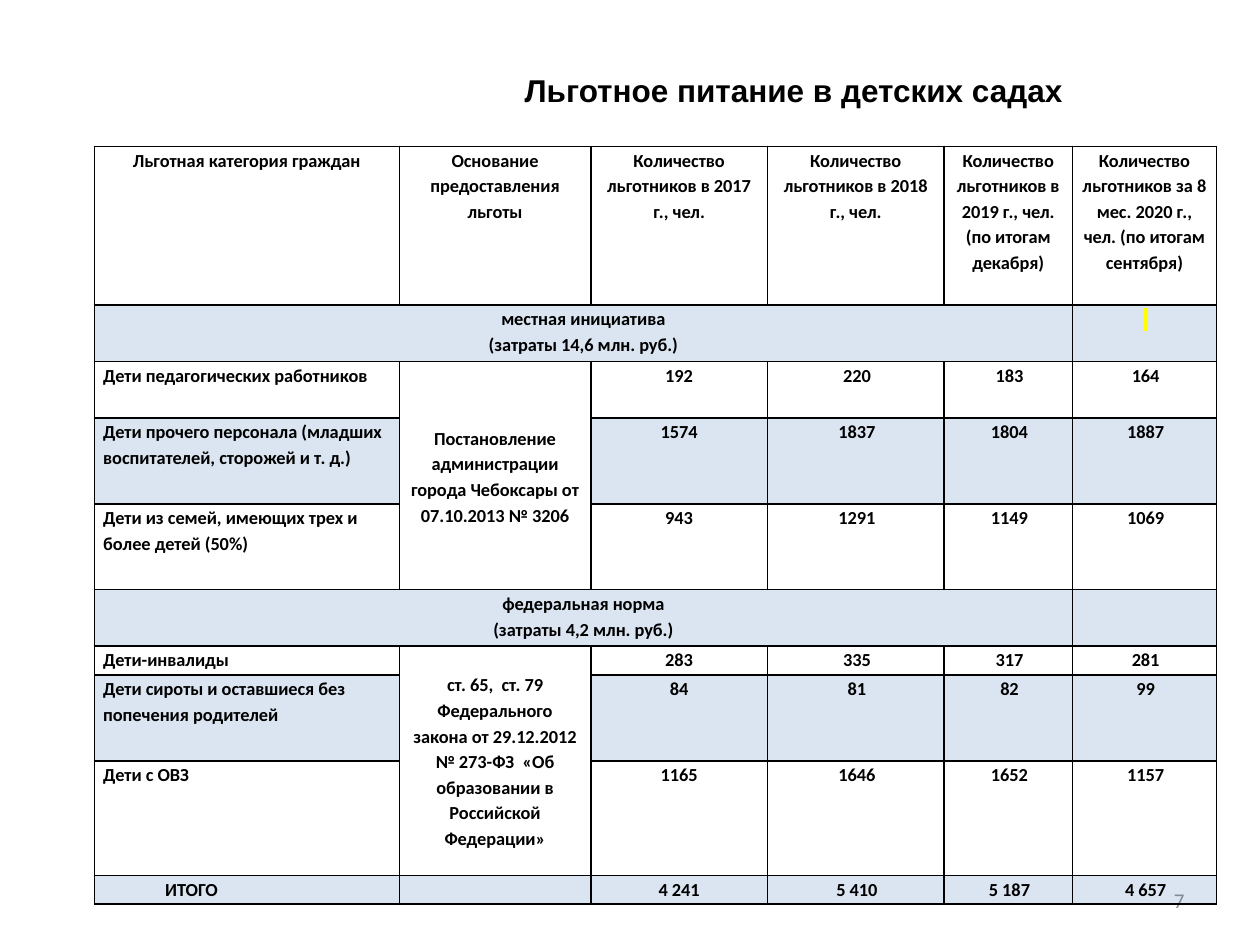
from dataclasses import dataclass

from lxml import etree
from pptx import Presentation
from pptx.dml.color import RGBColor
from pptx.enum.text import MSO_ANCHOR as Anchor, PP_ALIGN as Align
from pptx.oxml.ns import qn
from pptx.util import Cm, Pt

COLORS = {
    "text": "000000",
    "border": "000000",
    "band": "4F81BD",
    "page": "8C8C8C",
    "marker": "FFFF00",
}
BAND_ALPHA = 20
TABLE_FONT = 10.5
COLUMN_WIDTHS = [6.15, 3.86, 3.56, 3.56, 2.59, 2.9]
NARROW_INDENT = 0.05
TOTAL_INDENT = 1.25

HEADINGS = [
    "Льготная категория граждан",
    "Основание предоставления льготы",
    "Количество льготников в 2017 г., чел.",
    "Количество льготников в 2018 г., чел.",
    "Количество льготников в 2019 г., чел. (по итогам декабря)",
    "Количество льготников за 8 мес. 2020 г., чел. (по итогам сентября)",
]


@dataclass
class Row:
    height: float
    texts: list[str]
    is_section: bool = False
    basis_span: int = 1


ROWS = [
    Row(3.2, HEADINGS),
    Row(1.14, ["местная инициатива\n(затраты 14,6 млн. руб.)", "", "", "", "", " "], is_section=True),
    Row(1.14, ["Дети педагогических работников",
               "Постановление администрации города Чебоксары от 07.10.2013 № 3206",
               "192", "220", "183", "164"], basis_span=3),
    Row(1.73, ["Дети прочего персонала (младших воспитателей, сторожей и т. д.)",
               "", "1574", "1837", "1804", "1887"]),
    Row(1.73, ["Дети из семей, имеющих трех и более детей (50%)",
               "", "943", "1291", "1149", "1069"]),
    Row(1.14, ["федеральная норма\n(затраты 4,2 млн. руб.)", "", "", "", "", ""], is_section=True),
    Row(0.58, ["Дети-инвалиды",
               "ст. 65,  ст. 79 Федерального закона от 29.12.2012 № 273-ФЗ  "
               "«Об образовании в Российской Федерации»",
               "283", "335", "317", "281"], basis_span=3),
    Row(1.73, ["Дети сироты и оставшиеся без попечения родителей",
               "", "84", "81", "82", "99"]),
    Row(2.31, ["Дети с ОВЗ", "", "1165", "1646", "1652", "1157"]),
    Row(0.58, ["ИТОГО", "", "4 241", "5 410", "5 187", "4 657"]),
]


def rgb(name: str) -> RGBColor:
    return RGBColor.from_string(COLORS[name])


def set_font(paragraph, size: float, name: str, color: str, bold: bool) -> None:
    font = paragraph.font
    font.size, font.name, font.bold = Pt(size), name, bold
    font.color.rgb = rgb(color)


def add_solid(parent, color: str):
    fill = etree.SubElement(parent, qn("a:solidFill"))
    return etree.SubElement(fill, qn("a:srgbClr"), val=COLORS[color])


def set_fill(cell, banded: bool) -> None:
    if not banded:
        cell.fill.background()
        return
    cell.fill.solid()
    cell.fill.fore_color.rgb = rgb("band")
    color = cell._tc.tcPr.find(".//" + qn("a:srgbClr"))
    etree.SubElement(color, qn("a:alpha"), val=str(BAND_ALPHA * 1000))


def set_borders(cell) -> None:
    properties = cell._tc.get_or_add_tcPr()
    for position, side in enumerate(("lnL", "lnR", "lnT", "lnB")):
        line = etree.Element(qn(f"a:{side}"), w=str(Pt(1)))
        add_solid(line, "border")
        properties.insert(position, line)


def write_cell(cell, text: str, align: Align, indent: float, first_line: float) -> None:
    cell.margin_left = cell.margin_right = Cm(0.18)
    cell.margin_top = cell.margin_bottom = 0
    cell.text = text
    for paragraph in cell.text_frame.paragraphs:
        paragraph.alignment = align
        paragraph.line_spacing = 1.15
        properties = paragraph._p.get_or_add_pPr()
        properties.set("marL", str(Cm(indent)))
        properties.set("indent", str(Cm(first_line)))
        set_font(paragraph, TABLE_FONT, "Calibri", "text", True)
        if not text:
            etree.SubElement(paragraph._p, qn("a:endParaRPr"), sz=str(int(TABLE_FONT * 100)))
        # A lone space carries the yellow marker
        elif text == " ":
            run = paragraph.runs[0]._r.get_or_add_rPr()
            highlight = etree.SubElement(run, qn("a:highlight"))
            etree.SubElement(highlight, qn("a:srgbClr"), val=COLORS["marker"])


def add_benefits_table(slide) -> None:
    frame = slide.shapes.add_table(
        len(ROWS), len(COLUMN_WIDTHS), Cm(1.9), Cm(2.95),
        Cm(sum(COLUMN_WIDTHS)), Cm(sum(row.height for row in ROWS)))
    table = frame.table
    table.first_row = table.horz_banding = False
    for column, width in zip(table.columns, COLUMN_WIDTHS):
        column.width = Cm(width)

    last = len(ROWS) - 1
    for r, row in enumerate(ROWS):
        table.rows[r].height = Cm(row.height)
        for c, text in enumerate(row.texts):
            cell = table.cell(r, c)
            is_category = c == 0 and r > 0 and not row.is_section
            is_total = is_category and r == last
            align = Align.JUSTIFY if is_total else Align.LEFT if is_category else Align.CENTER
            indent = NARROW_INDENT if r > 0 and c > 2 else 0
            write_cell(cell, text, align, indent, TOTAL_INDENT if is_total else 0)
            set_fill(cell, r % 2 == 1)
            set_borders(cell)

        # Section bands span five columns, legal bases span three rows
        if row.is_section:
            table.cell(r, 0).merge(table.cell(r, 4))
        if row.basis_span > 1:
            basis = table.cell(r, 1)
            basis.merge(table.cell(r + row.basis_span - 1, 1))
            basis.vertical_anchor = Anchor.MIDDLE


def add_title(slide) -> None:
    title = slide.shapes.title
    title.left, title.top, title.width, title.height = Cm(6.1), Cm(1.3), Cm(19.8), Cm(1.4)
    title.text_frame.text = "Льготное питание в детских садах"
    title.text_frame.vertical_anchor = Anchor.TOP
    heading = title.text_frame.paragraphs[0]
    heading.alignment = Align.CENTER
    set_font(heading, 18, "Arial", "text", True)


def add_page_number(slide) -> None:
    page = slide.shapes.add_textbox(Cm(18.2), Cm(17.65), Cm(5.93), Cm(1.01)).text_frame
    page.word_wrap = True
    page.vertical_anchor = Anchor.MIDDLE
    page.text = "7"
    page.paragraphs[0].alignment = Align.RIGHT
    set_font(page.paragraphs[0], 12, "Calibri", "page", False)


def main() -> None:
    deck = Presentation()
    deck.slide_width, deck.slide_height = Cm(25.4), Cm(19.05)
    slide = deck.slides.add_slide(deck.slide_layouts[5])
    add_page_number(slide)
    add_title(slide)
    add_benefits_table(slide)
    deck.save("out.pptx")


if __name__ == "__main__":
    main()
